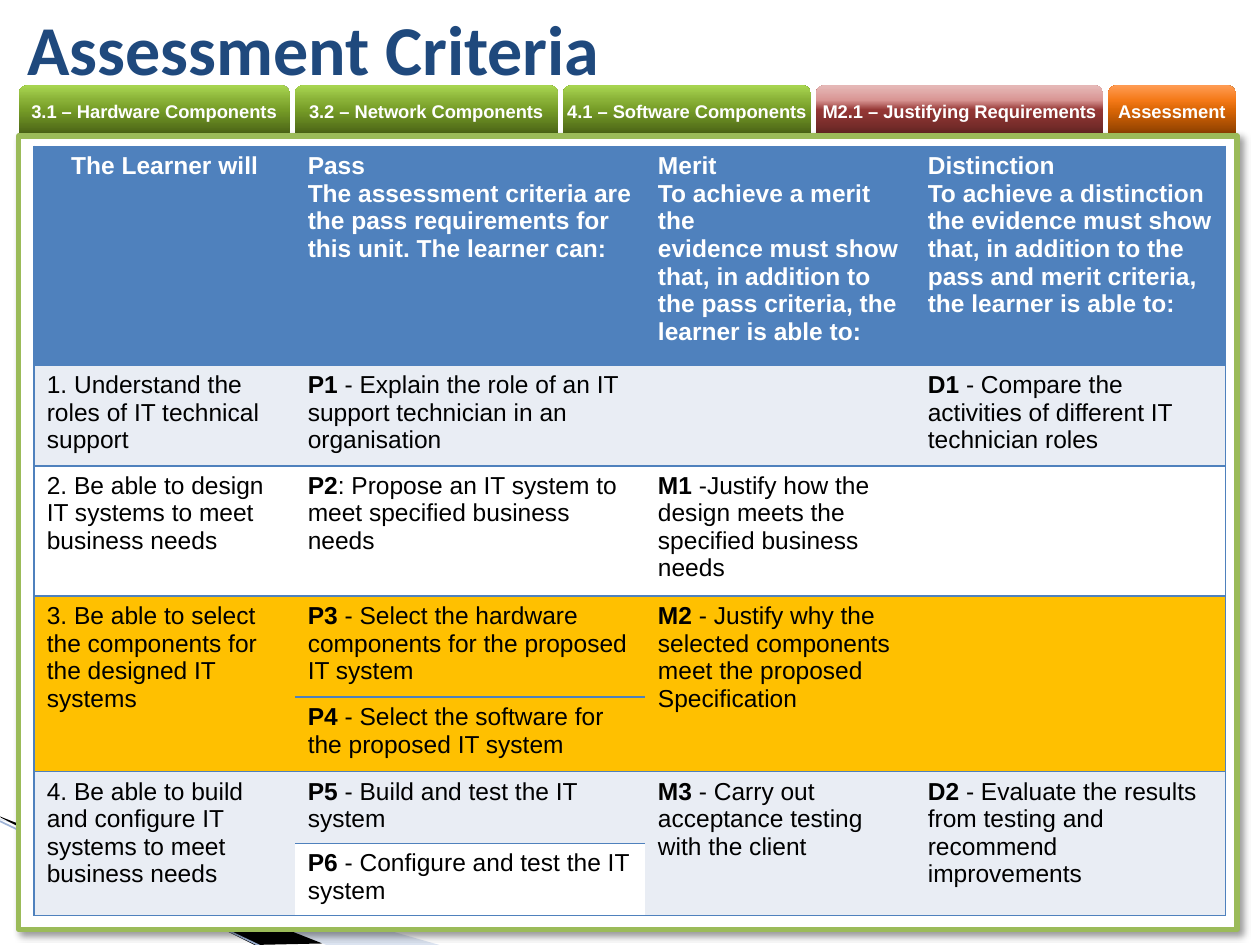
from collections import namedtuple

from lxml.etree import SubElement
from pptx import Presentation
from pptx.dml.color import RGBColor
from pptx.enum.shapes import MSO_CONNECTOR as Connector, MSO_SHAPE as Shape
from pptx.enum.text import MSO_ANCHOR as Anchor, PP_ALIGN as Align
from pptx.oxml.ns import qn
from pptx.util import Cm, Pt

Box = namedtuple("Box", "left top width height")

BLUE, WHITE, BLACK, PALE, AMBER = "4F81BD", "FFFFFF", "000000", "E9EDF4", "FFC000"
GREEN_STOPS = {0: "4A6316", 50: "769C27", 70: "89B137", 100: "A9D651"}
RED_STOPS = {0: "632523", 50: "953735", 70: "D99694", 100: "E6B9B8"}
ORANGE_STOPS = {0: "8B3F00", 50: "DA6606", 70: "F47917", 100: "FF9C54"}

TABS = [
    ("3.1 – Hardware Components", 5.46, GREEN_STOPS),
    ("3.2 – Network Components", 5.31, GREEN_STOPS),
    ("4.1 – Software Components", 5.0, GREEN_STOPS),
    ("M2.1 – Justifying Requirements", 5.79, RED_STOPS),
    ("Assessment", 2.57, ORANGE_STOPS),
]
COLUMN_WIDTHS = [5.26, 7.06, 5.44, 6.25]
ROW_HEIGHTS = [4.39, 2.03, 2.62, 2.03, 1.5, 1.45, 1.45]
ROW_FILLS = [BLUE, PALE, WHITE, AMBER, AMBER, PALE, WHITE]
MERGED_ROWS = [(3, 4), (5, 6)]
MERGED_COLUMNS = [0, 2, 3]
CRITERIA = [
    ["The Learner will",
     "Pass\nThe assessment criteria are the pass requirements for this unit. The learner can:",
     "Merit\nTo achieve a merit the\nevidence must show that, in addition to the pass criteria, "
     "the learner is able to:",
     "Distinction\nTo achieve a distinction the evidence must show that, in addition to the "
     "pass and merit criteria, the learner is able to:"],
    ["1. Understand the roles of IT technical support",
     "P1| - Explain the role of an IT support technician in an organisation",
     "",
     "D1| - Compare the activities of different IT technician roles"],
    ["2. Be able to design IT systems to meet business needs",
     "P2|: Propose an IT system to meet specified business needs",
     "M1| -Justify how the design meets the\nspecified business needs",
     ""],
    ["3. Be able to select the components for the designed IT systems",
     "P3| - Select the hardware components for the proposed IT system",
     "M2| - Justify why the selected components meet the proposed\nSpecification",
     ""],
    ["", "P4| - Select the software for the proposed IT system", "", ""],
    ["4. Be able to build and configure IT systems to meet business needs",
     "P5| - Build and test the IT system",
     "M3| - Carry out acceptance testing with the client",
     "D2| - Evaluate the results from testing and recommend improvements"],
    ["", "P6| - Configure and test the IT system", "", ""],
]


def color(value):
    """Turn a hex string into a colour."""
    return RGBColor.from_string(value)


def add_color(parent, value, alpha=None):
    """Append a colour element, with an opacity in percent if given."""
    element = SubElement(parent, qn("a:srgbClr"), val=value)
    if alpha is not None:
        SubElement(element, qn("a:alpha"), val=str(alpha * 1000))


def write_text(frame, text, font="Arial", size=14, ink=BLACK, bold=False, align=Align.LEFT):
    """Write lines as paragraphs; the part of a line before a bar is bold."""
    for index, line in enumerate(text.split("\n")):
        para = frame.paragraphs[0] if index == 0 else frame.add_paragraph()
        para.alignment = align
        para.font.size = Pt(size)
        code, bar, rest = line.partition("|")
        for part, heavy in ((code, bold or bool(bar)), (rest, bold)):
            if part:
                span = para.add_run()
                span.text = part
                span.font.name, span.font.size = font, Pt(size)
                span.font.bold, span.font.color.rgb = heavy, color(ink)


def add_swoosh(page, box):
    """Draw the pale and black wedges and their thin edge."""
    wedges = [
        ("A7B9DB", 40, [(-0.05, 0.05), (8.86, 2.59), (6.58, 2.59), (-0.05, 0.02)]),
        (BLACK, 100, [(0, 0), (6.5, 2.56), (5.13, 2.59), (0.03, 0.03)]),
    ]
    for fill, alpha, offsets in wedges:
        points = [(Cm(box.left + x), Cm(box.top + y)) for x, y in offsets]
        builder = page.shapes.build_freeform(*points[0], scale=1.0)
        builder.add_line_segments(points[1:], close=True)
        wedge = builder.convert_to_shape()
        wedge.shadow.inherit = False
        wedge.fill.solid()
        wedge.fill.fore_color.rgb = color(fill)
        wedge.line.fill.background()
        tint = wedge.fill._xPr.find(qn("a:solidFill")).find(qn("a:srgbClr"))
        SubElement(tint, qn("a:alpha"), val=str(alpha * 1000))
    edge = page.shapes.add_connector(
        Connector.STRAIGHT, Cm(box.left - 0.03), Cm(box.top + 0.08),
        Cm(box.left + 5.31), Cm(box.top + 2.64))
    edge.line.color.rgb = color("9EB3D6")
    edge.line.width = Pt(0.95)
    SubElement(edge._element.spPr, qn("a:effectLst"))


def add_tabs(page, box, gap=0.1):
    """Lay the navigation tabs side by side from the left of the box."""
    left = box.left
    for label, width, stops in TABS:
        tab = page.shapes.add_shape(
            Shape.ROUND_2_SAME_RECTANGLE, Cm(left), Cm(box.top), Cm(width), Cm(box.height))
        tab.shadow.inherit = False
        tab.line.fill.background()
        tab.fill.gradient()
        tab.fill.gradient_angle = 90
        stop_list = tab.fill._xPr.find(qn("a:gradFill")).find(qn("a:gsLst"))
        stop_list.clear()
        for position, value in stops.items():
            add_color(SubElement(stop_list, qn("a:gs"), pos=str(position * 1000)), value)
        frame = tab.text_frame
        frame.margin_left = frame.margin_right = frame.margin_top = frame.margin_bottom = 0
        frame.vertical_anchor = Anchor.MIDDLE
        frame.word_wrap = False
        write_text(frame, label, size=10.5, ink=WHITE, bold=True, align=Align.CENTER)
        left += width + gap


def add_panel(page, box):
    """Draw the white panel with a green frame and a soft shadow."""
    panel = page.shapes.add_shape(Shape.RECTANGLE, *map(Cm, box))
    panel.fill.solid()
    panel.fill.fore_color.rgb = color(WHITE)
    panel.line.color.rgb = color("9BBB59")
    panel.line.width = Pt(3)
    panel.shadow.inherit = False
    effects = panel._element.spPr.find(qn("a:effectLst"))
    shadow = SubElement(effects, qn("a:outerShdw"), blurRad=str(Pt(4)), dist=str(Pt(3)),
                        dir=str(45 * 60000), algn="tl", rotWithShape="0")
    add_color(shadow, BLACK, alpha=40)


def add_title(page, box):
    """Write the slide title."""
    frame = page.shapes.add_textbox(*map(Cm, box)).text_frame
    frame.word_wrap = True
    frame.vertical_anchor = Anchor.MIDDLE
    write_text(frame, "Assessment Criteria", font="Calibri", size=40, ink="1F497D", bold=True)


def set_borders(cell, sides):
    """Rule the named sides of a cell and clear the others."""
    properties = cell._tc.get_or_add_tcPr()
    for side in "LRTB":
        line = SubElement(properties, qn(f"a:ln{side}"), w=str(Pt(1)))
        if side in sides:
            add_color(SubElement(line, qn("a:solidFill")), BLUE)
        else:
            SubElement(line, qn("a:noFill"))


def add_criteria_table(page, box):
    """Build the grid of pass, merit and distinction criteria."""
    table = page.shapes.add_table(len(ROW_HEIGHTS), len(COLUMN_WIDTHS), *map(Cm, box)).table
    for column, width in zip(table.columns, COLUMN_WIDTHS):
        column.width = Cm(width)
    for row, height in zip(table.rows, ROW_HEIGHTS):
        row.height = Cm(height)
    last = len(COLUMN_WIDTHS) - 1
    for i, texts in enumerate(CRITERIA):
        for j, text in enumerate(texts):
            cell = table.cell(i, j)
            set_borders(cell, "TB" + {0: "L", last: "R"}.get(j, ""))
            cell.fill.solid()
            cell.fill.fore_color.rgb = color(ROW_FILLS[i])
            header = i == 0
            write_text(cell.text_frame, text, ink=WHITE if header else BLACK, bold=header,
                       align=Align.CENTER if header and j == 0 else Align.LEFT)
    for first, second in MERGED_ROWS:
        for j in MERGED_COLUMNS:
            table.cell(first, j).merge(table.cell(second, j))


def main():
    """Build the slide and save the deck."""
    deck = Presentation()
    deck.slide_width, deck.slide_height = Cm(25.4), Cm(19.05)
    page = deck.slides.add_slide(deck.slide_layouts[6])
    add_swoosh(page, Box(0, 16.46, 8.86, 2.59))
    add_tabs(page, Box(0.38, 1.72, 24.5, 0.99))
    add_panel(page, Box(0.38, 2.74, 24.56, 16))
    add_title(page, Box(0.3, 0, 21.41, 1.93))
    add_criteria_table(page, Box(0.69, 2.95, sum(COLUMN_WIDTHS), sum(ROW_HEIGHTS)))
    deck.save("out.pptx")


if __name__ == "__main__":
    main()
